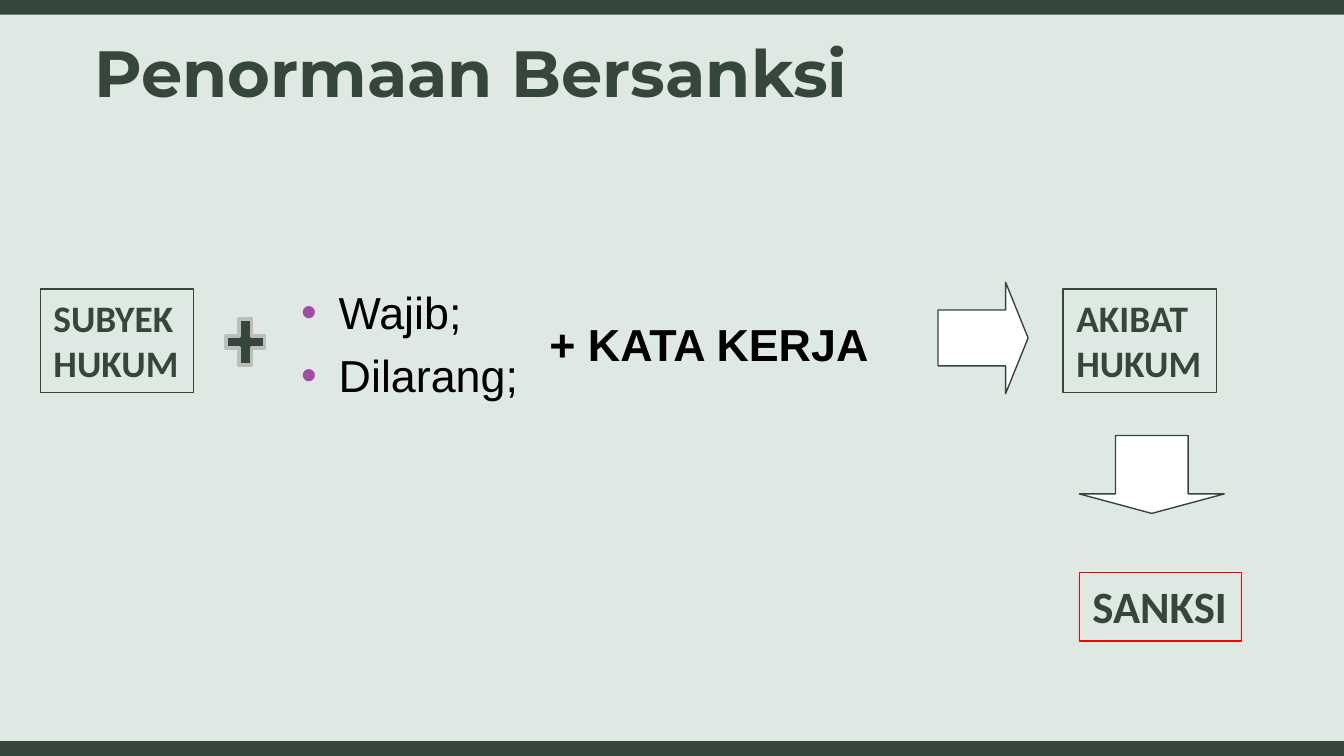
from lxml import etree
from pptx import Presentation
from pptx import util as u
from pptx.dml import color
from pptx.enum import shapes, text
from pptx.oxml import ns

COLORS = {
    "background": "DEE9E3",
    "green": "35463D",
    "bullet": "A04DA3",
    "black": "000000",
    "white": "FFFFFF",
    "gray": "BDBDBD",
    "red": "FF0000",
}
WIDTH = 10
HEIGHT = WIDTH * 9 / 16
BAR_HEIGHT = 0.11
ROW_TOP = 2.15


def rgb(name):
    return color.RGBColor.from_string(COLORS[name])


def place(shape, left, top, width, height):
    shape.left, shape.top = u.Inches(left), u.Inches(top)
    shape.width, shape.height = u.Inches(width), u.Inches(height)


def write_text(shape, lines, size, font="Calibri", ink="green", bold=True,
               wrap=False, inset=(0.1, 0.05), space_before=0):
    frame = shape.text_frame
    frame.text = "\n".join(lines)
    frame.word_wrap = wrap
    frame.auto_size = text.MSO_AUTO_SIZE.NONE
    frame.vertical_anchor = text.MSO_ANCHOR.TOP
    frame.margin_left = frame.margin_right = u.Inches(inset[0])
    frame.margin_top = frame.margin_bottom = u.Inches(inset[1])
    for paragraph in frame.paragraphs:
        paragraph.alignment = text.PP_ALIGN.LEFT
        paragraph.space_before = u.Pt(space_before)
        run_font = paragraph.runs[0].font
        run_font.name, run_font.size, run_font.bold = font, u.Pt(size), bold
        run_font.color.rgb = rgb(ink)


def add_bullets(shape, indent, hanging):
    for paragraph in shape.text_frame.paragraphs:
        properties = paragraph._p.get_or_add_pPr()
        properties.set("marL", str(u.Inches(indent)))
        properties.set("indent", str(-u.Inches(hanging)))
        bullet_color = etree.SubElement(properties, ns.qn("a:buClr"))
        etree.SubElement(bullet_color, ns.qn("a:srgbClr"), val=COLORS["bullet"])
        etree.SubElement(properties, ns.qn("a:buChar"), char="•")


def add_shape(slide, kind, box, fill=None, line=None, line_width=0.75):
    shape = slide.shapes.add_shape(kind, *(u.Inches(length) for length in box))
    shape.shadow.inherit = False
    if fill:
        shape.fill.solid()
        shape.fill.fore_color.rgb = rgb(fill)
    else:
        shape.fill.background()
    if line:
        shape.line.color.rgb = rgb(line)
        shape.line.width = u.Pt(line_width)
    else:
        shape.line.fill.background()
    return shape


def add_label_box(slide, box, lines, size=20, line="green"):
    shape = add_shape(slide, shapes.MSO_SHAPE.RECTANGLE, box, line=line)
    write_text(shape, lines, size)


def add_arrow(slide, kind, box):
    arrow = add_shape(slide, kind, box, fill="white", line="green")
    arrow.adjustments[0], arrow.adjustments[1] = 0.5, 0.25


def add_frame(slide):
    slide.background.fill.solid()
    slide.background.fill.fore_color.rgb = rgb("background")
    for top in (HEIGHT - BAR_HEIGHT, 0):
        add_shape(slide, shapes.MSO_SHAPE.RECTANGLE,
                  (0, top, WIDTH, BAR_HEIGHT), fill="green")


def add_title(slide, box):
    title = slide.shapes.title
    place(title, *box)
    write_text(title, ["Penormaan Bersanksi"], 35, font="Montserrat",
               wrap=True, inset=(0.1, 0.1))


def add_norm(slide, left, top):
    add_label_box(slide, (left, top, 1.14, 0.77), ["SUBYEK", "HUKUM"])
    add_shape(slide, shapes.MSO_SHAPE.MATH_PLUS,
              (left + 1.33, top + 0.16, 0.39, 0.47),
              fill="green", line="gray", line_width=2)
    duties = slide.placeholders[1]
    place(duties, left + 1.72, top - 0.08, 2.03, 1.17)
    write_text(duties, ["Wajib;", "Dilarang;"], 24, font="Arial", ink="black",
               bold=False, wrap=True, space_before=5)
    add_bullets(duties, indent=0.4, hanging=0.28)
    verb = slide.shapes.add_textbox(u.Inches(left + 3.69), u.Inches(top + 0.16),
                                    u.Inches(2.87), u.Inches(0.51))
    write_text(verb, ["+ KATA KERJA"], 24, font="Arial", ink="black")


def add_consequence(slide, left, top):
    add_arrow(slide, shapes.MSO_SHAPE.RIGHT_ARROW,
              (left, top - 0.05, 0.67, 0.83))
    add_label_box(slide, (left + 0.93, top, 1.14, 0.77), ["AKIBAT", "HUKUM"])
    add_arrow(slide, shapes.MSO_SHAPE.DOWN_ARROW,
              (left + 1.05, top + 1.09, 1.08, 0.58))
    add_label_box(slide, (left + 1.05, top + 2.11, 1.21, 0.51), ["SANKSI"],
                  size=24, line="red")


def main():
    presentation = Presentation()
    presentation.slide_width = u.Inches(WIDTH)
    presentation.slide_height = u.Inches(HEIGHT)
    slide = presentation.slides.add_slide(presentation.slide_layouts[1])
    add_frame(slide)
    add_title(slide, (0.6, 0.14, 6.26, 0.74))
    add_norm(slide, 0.3, ROW_TOP)
    add_consequence(slide, 6.98, ROW_TOP)
    presentation.save("out.pptx")


if __name__ == "__main__":
    main()
